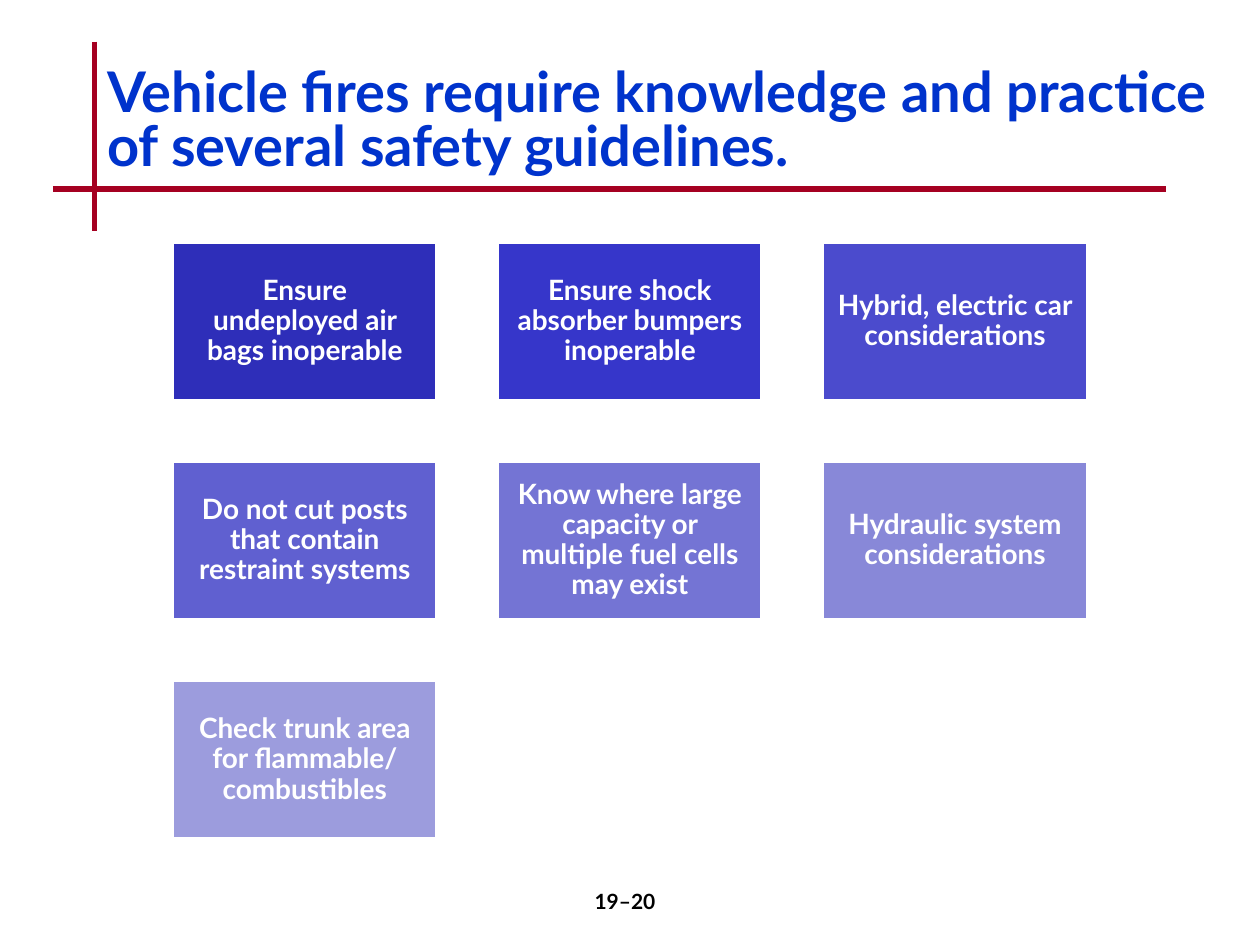
from pptx import Presentation
from pptx.dml.color import RGBColor
from pptx.enum.shapes import MSO_CONNECTOR as Connector, MSO_SHAPE as Shape
from pptx.enum.text import MSO_ANCHOR as Anchor, PP_ALIGN as Align
from pptx.oxml.ns import qn
from pptx.util import Inches, Pt
from lxml.etree import SubElement

GUIDELINES = [
    ("Ensure undeployed air bags inoperable", "2E2EB9"),
    ("Ensure shock absorber bumpers inoperable", "3636CA"),
    ("Hybrid, electric car considerations", "4B4BCD"),
    ("Do not cut posts that contain restraint systems", "6060D0"),
    ("Know where large capacity or multiple fuel cells may exist", "7474D4"),
    ("Hydraulic system considerations", "8888D8"),
    ("Check trunk area for flammable/ combustibles", "9C9CDD"),
]


def color(hex_string):
    return RGBColor.from_string(hex_string)


def write(frame, text, size, ink, align=Align.CENTER, anchor=Anchor.TOP,
          line_spacing=1.0, margins=(0.1, 0.05), font="Lato"):
    """Fill a text frame with one bold paragraph; margins are side, top/bottom."""
    frame.word_wrap = True
    frame.vertical_anchor = anchor
    frame.margin_left = frame.margin_right = Inches(margins[0])
    frame.margin_top = frame.margin_bottom = Inches(margins[1])
    paragraph = frame.paragraphs[0]
    paragraph.text = text
    paragraph.alignment = align
    paragraph.line_spacing = line_spacing
    paragraph.font.name = font
    paragraph.font.size = Pt(size)
    paragraph.font.bold = True
    paragraph.font.color.rgb = color(ink)


class SafetySlide:
    """Style, card grid and current slide; lengths are in inches."""

    TITLE_INK, RULE, WHITE, BLACK = "0033CC", "A50021", "FFFFFF", "000000"
    COLUMNS = 3
    GRID_LEFT, GRID_TOP = 1.37, 1.92
    CARD_WIDTH, CARD_HEIGHT, GAP = 2.1, 1.26, 0.48

    def __init__(self, deck):
        self.slide = deck.slides.add_slide(deck.slide_layouts[5])

    def rule(self, x1, y1, x2, y2):
        line = self.slide.shapes.add_connector(
            Connector.STRAIGHT, *map(Inches, (x1, y1, x2, y2)))
        line.line.color.rgb = color(self.RULE)
        line.line.width = Pt(3)
        SubElement(line._element.spPr, qn("a:effectLst"))

    def title(self, text, left, top, width, height):
        title = self.slide.shapes.title
        title.left, title.top = Inches(left), Inches(top)
        title.width, title.height = Inches(width), Inches(height)
        write(title.text_frame, text, 32, self.TITLE_INK,
              align=Align.LEFT, line_spacing=0.8)

    def page_number(self, text, left, top, width, height):
        box = self.slide.shapes.add_textbox(
            *map(Inches, (left, top, width, height)))
        write(box.text_frame, text, 12, self.BLACK)

    def card(self, index, text, fill):
        row, column = divmod(index, self.COLUMNS)
        left = self.GRID_LEFT + column * (self.CARD_WIDTH + self.GAP)
        top = self.GRID_TOP + row * (self.CARD_HEIGHT + self.GAP)
        card = self.slide.shapes.add_shape(
            Shape.RECTANGLE,
            *map(Inches, (left, top, self.CARD_WIDTH, self.CARD_HEIGHT)))
        card.shadow.inherit = False
        card.fill.solid()
        card.fill.fore_color.rgb = color(fill)
        card.line.color.rgb = color(self.WHITE)
        card.line.width = Pt(2)
        write(card.text_frame, text, 16, self.WHITE, anchor=Anchor.MIDDLE,
              line_spacing=0.9, margins=(0.12, 0.12))


def main():
    deck = Presentation()
    deck.slide_width, deck.slide_height = Inches(10), Inches(7.5)
    page = SafetySlide(deck)
    page.rule(0.75, 0.33, 0.75, 1.83)
    page.rule(0.42, 1.5, 9.25, 1.5)
    page.title("Vehicle fires require knowledge and practice of several "
               "safety guidelines.", 0.75, 0.5, 9.16, 1)
    for index, (guideline, fill) in enumerate(GUIDELINES):
        page.card(index, guideline, fill)
    page.page_number("19–20", 3.92, 7, 2.08, 0.5)
    deck.save("out.pptx")


if __name__ == "__main__":
    main()
